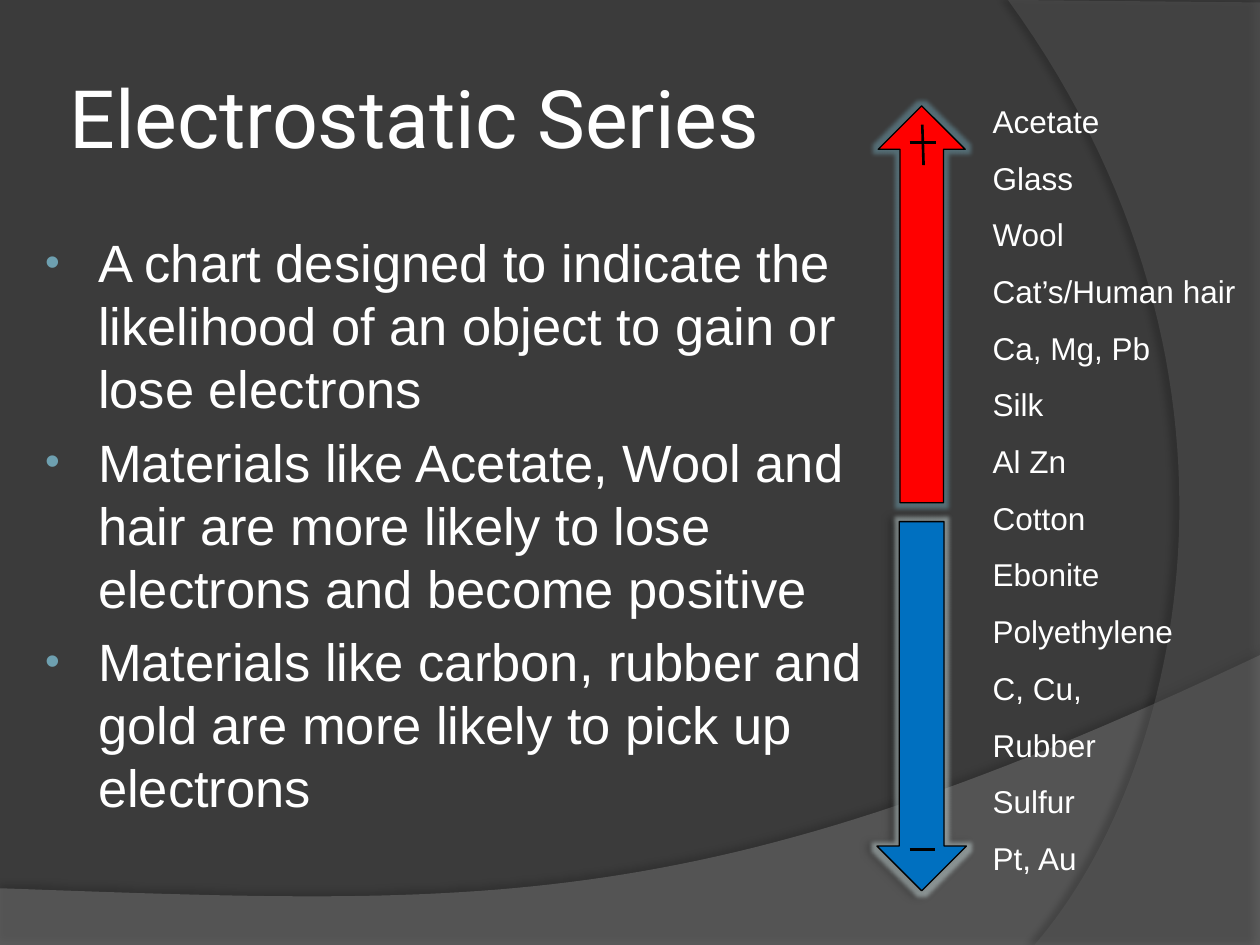
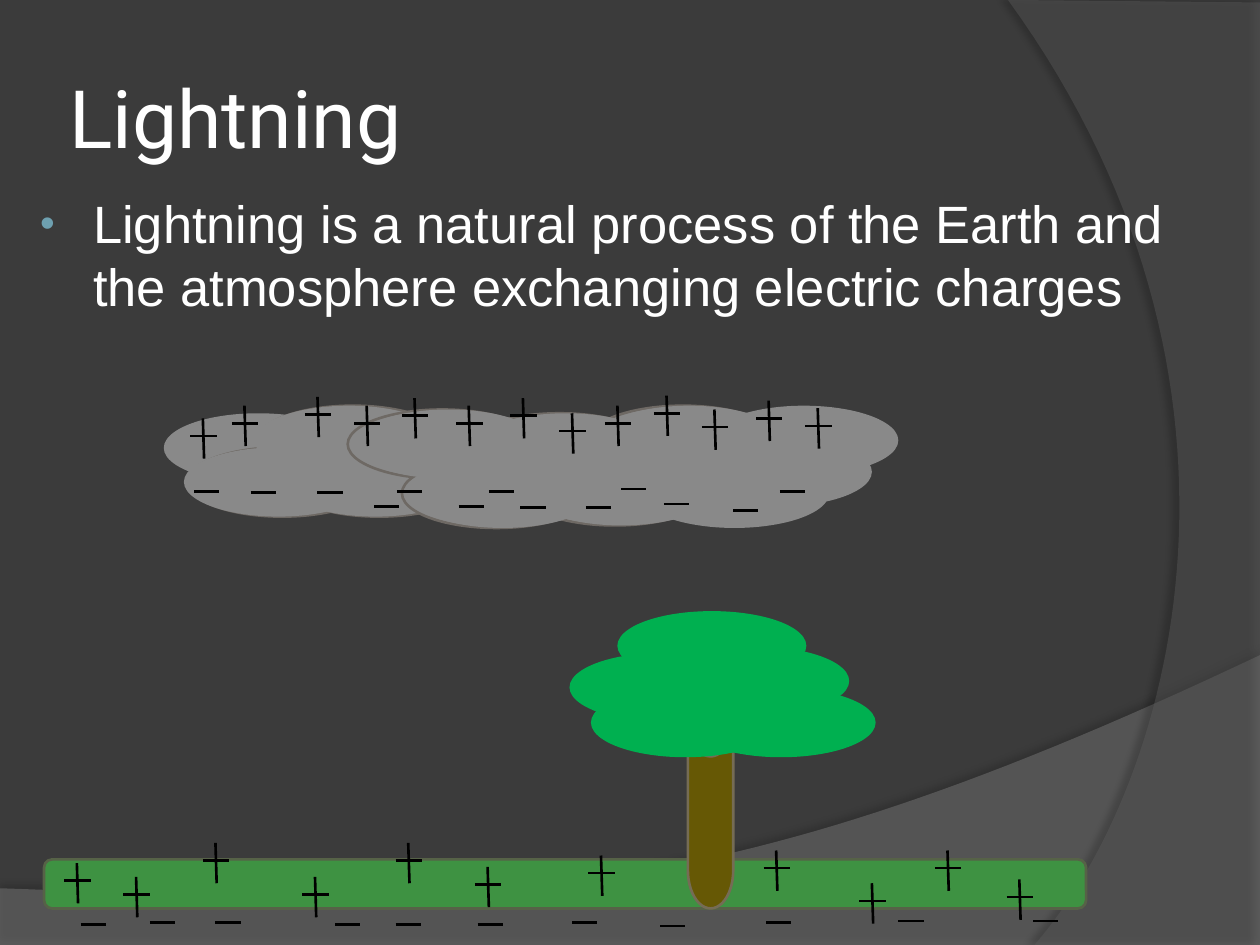
from dataclasses import dataclass

from lxml import etree
from pptx import Presentation
from pptx import util as u
from pptx.dml.color import RGBColor
from pptx.enum import shapes as sh, text as tx
from pptx.oxml import ns

PX = 9144  # 100 px to the inch
WIDE, HIGH = 1000, 750
KIND = sh.MSO_SHAPE


@dataclass(frozen=True)
class Theme:
    back: str = "3B3B3B"
    wave: str = "7F7F7F"
    arc: str = "5E5E5E"
    ink: str = "FFFFFF"
    dark: str = "000000"
    dot: str = "6EA0B0"
    halo: str = "CCDDDD"
    plus: str = "FF0000"
    minus: str = "0070C0"
    cloud: str = "898989"
    rim: str = "6E6964"
    grass: str = "3E9242"
    edge: str = "566247"
    trunk: str = "665805"
    bark: str = "756C55"
    leaf: str = "00B050"
    head_font: str = "Roboto"
    font: str = "Arial"
    head: int = 46
    body: int = 30
    small: int = 18


T = Theme()


# ---- basic parts ----
def emu(*vals):
    return [u.Emu(round(v * PX)) for v in vals]


def tag(up, name, **attrs):
    node = etree.SubElement(up, ns.qn("a:" + name))
    for key, val in attrs.items():
        node.set(key, str(val))
    return node


def tint(up, color, alpha):
    tag(tag(up, "srgbClr", val=color), "alpha", val=alpha * 1000)


def paint(shape, fill, line=None, width=1.5, alpha=None):
    shape.shadow.inherit = False
    shape.fill.solid()
    shape.fill.fore_color.rgb = RGBColor.from_string(fill)
    if alpha:
        clr = shape._element.spPr.find(".//" + ns.qn("a:srgbClr"))
        tag(clr, "alpha", val=alpha * 1000)
    if line:
        shape.line.color.rgb = RGBColor.from_string(line)
        shape.line.width = u.Pt(width)
    else:
        shape.line.fill.background()
    return shape


def effects(shape):
    return shape._element.spPr.find(ns.qn("a:effectLst"))


def shade(shape, alpha, dist, angle):
    node = tag(effects(shape), "outerShdw", blurRad=u.Pt(4), dist=u.Pt(dist),
               dir=angle * 60000, algn="ctr", rotWithShape=0)
    tint(node, T.dark, alpha)


def glow(shape, color, alpha):
    tint(tag(effects(shape), "glow", rad=u.Pt(5)), color, alpha)


def form(slide, kind, box, fill, line=None, width=1.5):
    return paint(slide.shapes.add_shape(kind, *emu(*box)), fill, line, width)


def stroke(slide, x1, y1, x2, y2):
    line = slide.shapes.add_connector(sh.MSO_CONNECTOR.STRAIGHT,
                                      *emu(x1, y1, x2, y2))
    line.line.color.rgb = RGBColor.from_string(T.dark)
    line.line.width = u.Pt(1.5)
    tag(line._element.spPr, "effectLst")


def plus(slide, x, y):
    stroke(slide, x + 10, y, x + 11, y + 32)
    stroke(slide, x, y + 14, x + 21, y + 14)


def minus(slide, x, y):
    stroke(slide, x, y, x + 20, y)


def marks(slide, box, draw, spots):
    for x, y in spots:
        draw(slide, box[0] + x, box[1] + y)


# ---- text ----
def frame(slide, box):
    pane = slide.shapes.add_textbox(*emu(*box)).text_frame
    pane.word_wrap = True
    return pane


def write(pane, lines, size, font):
    for i, line in enumerate(lines):
        par = pane.paragraphs[0] if i == 0 else pane.add_paragraph()
        run = par.add_run()
        run.text = line
        run.font.size = u.Pt(size)
        run.font.name = font
        run.font.color.rgb = RGBColor.from_string(T.ink)
    return pane.paragraphs


def title(slide, box, words):
    pane = frame(slide, box)
    pane.vertical_anchor = tx.MSO_ANCHOR.MIDDLE
    pane.margin_left = pane.margin_right = u.Emu(5 * PX)
    write(pane, [words], T.head, T.head_font)


def points(slide, box, lines):
    for par in write(frame(slide, box), lines, T.body, T.font):
        par.space_before = u.Pt(T.body * 0.2)
        props = par._p.get_or_add_pPr()
        props.set("marL", str(46 * PX))
        props.set("indent", str(-42 * PX))
        tag(tag(props, "buClr"), "srgbClr", val=T.dot)
        tag(props, "buSzPct", val=80000)
        tag(props, "buFont", typeface=T.font)
        tag(props, "buChar", char="•")


# ---- shared backdrop ----
def curve(a, b, c, d, steps=60):
    for i in range(1, steps + 1):
        t = i / steps
        s = 1 - t
        yield tuple(s**3 * p + 3 * s * s * t * q + 3 * s * t * t * r + t**3 * v
                    for p, q, r, v in zip(a, b, c, d))


def sweep(slide, spots, fill, alpha):
    start, *rest = [emu(*spot) for spot in spots]
    pen = slide.shapes.build_freeform(*start, scale=1.0)
    pen.add_line_segments(rest, close=True)
    return paint(pen.convert_to_shape(), fill, alpha=alpha)


def backdrop(slide):
    wave = [(0, 705), (0, HIGH), (WIDE, HIGH), (WIDE, 520),
            *curve((WIDE, 520), (559, 729), (391, 719), (0, 705))]
    shade(sweep(slide, wave, T.wave, 45), 35, 3.5, 270)
    arc = [(WIDE, 2), (WIDE, HIGH), (821, HIGH),
           *curve((821, HIGH), (935, 619), (1018, 300), (800, 0))]
    shade(sweep(slide, arc, T.arc, 40), 45, 4, 180)


# ---- series slide ----
def scale(slide, box):
    x, y, w, h = box
    up = form(slide, KIND.UP_ARROW, (x + 1, y, w - 2, 315),
              T.plus, T.dark, 0.75)
    glow(up, T.dot, 50)
    down = form(slide, KIND.DOWN_ARROW, (x, y + 330, w, h - 330),
                T.minus, T.dark, 0.75)
    glow(down, T.halo, 50)
    shade(down, 40, 3, 180)
    plus(slide, x + 26, y + 15)
    minus(slide, x + 26, y + 590)


def ranks(slide, box, names):
    for par in write(frame(slide, box), names, T.small, T.font):
        par.line_spacing = 1.5


def series(slide):
    backdrop(slide)
    title(slide, (50, 30, 592, 125), "Electrostatic Series")
    points(slide, (22, 178, 710, 495), [
        "A chart designed to indicate the likelihood of an object to gain or "
        "lose electrons",
        "Materials like Acetate, Wool and hair are more likely to lose "
        "electrons and become positive",
        "Materials like carbon, rubber and gold are more likely to pick up "
        "electrons"])
    ranks(slide, (778, 61, 220, 646), [
        "Acetate", "Glass", "Wool", "Cat’s/Human hair", "Ca, Mg, Pb", "Silk",
        "Al Zn", "Cotton", "Ebonite", "Polyethylene", "C, Cu,", "Rubber",
        "Sulfur", "Pt, Au"])
    scale(slide, (696, 84, 71, 623))


# ---- lightning slide ----
def puffs(slide, box, spots, fill, line=None, shift=0):
    for x, y in spots:
        form(slide, KIND.OVAL, (box[0] + x + shift, box[1] + y, 150, 55),
             fill, line)


def cloud(slide, box):
    left = [(19, 33), (75, 0), (96, 33)]
    right = [(146, 3), (189, 42), (239, 6), (283, 40), (337, 0)]
    end = [(378, 42), (433, 0), (412, 25)]
    puffs(slide, box, [(0, 6)], T.cloud)
    puffs(slide, box, left, T.cloud, T.rim)
    puffs(slide, box, left, T.cloud, shift=-3)
    puffs(slide, box, right, T.cloud, T.rim)
    puffs(slide, box, end, T.cloud)
    puffs(slide, box, right, T.cloud, shift=5)
    marks(slide, box, minus, [
        (24, 68), (69, 69), (122, 69), (167, 80), (185, 68), (234, 80),
        (283, 81), (258, 68), (335, 81), (363, 66), (397, 78), (452, 83),
        (489, 68)])
    marks(slide, box, plus, [
        (21, 10), (54, 0), (112, -7), (151, 0), (189, -6), (232, 0),
        (275, -6), (314, 6), (350, 0), (389, -8), (427, 3), (470, -4),
        (509, 2)])


def ground(slide, box):
    form(slide, KIND.ROUNDED_RECTANGLE, box, T.grass, T.edge)


def tree(slide, box):
    x, y, w, h = box
    form(slide, KIND.FLOWCHART_MAGNETIC_DISK, (x + 94, y + 55, 36, h - 55),
         T.trunk, T.bark)
    puffs(slide, box, [(0, 33), (17, 61), (72, 28), (93, 61), (38, 0)],
          T.leaf)


def charges(slide, box):
    marks(slide, box, plus, [
        (16, 3), (63, 14), (126, -13), (205, 14), (279, -13), (342, 6),
        (432, -3), (571, -7), (647, 19), (707, -7), (764, 16)])
    marks(slide, box, minus, [
        (29, 52), (84, 50), (136, 50), (231, 52), (279, 52), (344, 52),
        (419, 50), (489, 53), (573, 50), (678, 49), (785, 49)])


def storm(slide):
    backdrop(slide)
    title(slide, (50, 30, 817, 125), "Lightning")
    points(slide, (18, 147, 969, 121), [
        "Lightning is a natural process of the Earth and the atmosphere "
        "exchanging electric charges"])
    field = (35, 682, 827, 39)
    cloud(slide, (130, 322, 583, 97))
    ground(slide, field)
    tree(slide, (452, 485, 243, 236))
    charges(slide, field)


def main():
    deck = Presentation()
    deck.slide_width, deck.slide_height = emu(WIDE, HIGH)
    fill = deck.slide_master.background.fill
    fill.solid()
    fill.fore_color.rgb = RGBColor.from_string(T.back)
    for build in (series, storm):
        build(deck.slides.add_slide(deck.slide_layouts[6]))
    deck.save("out.pptx")


if __name__ == "__main__":
    main()
